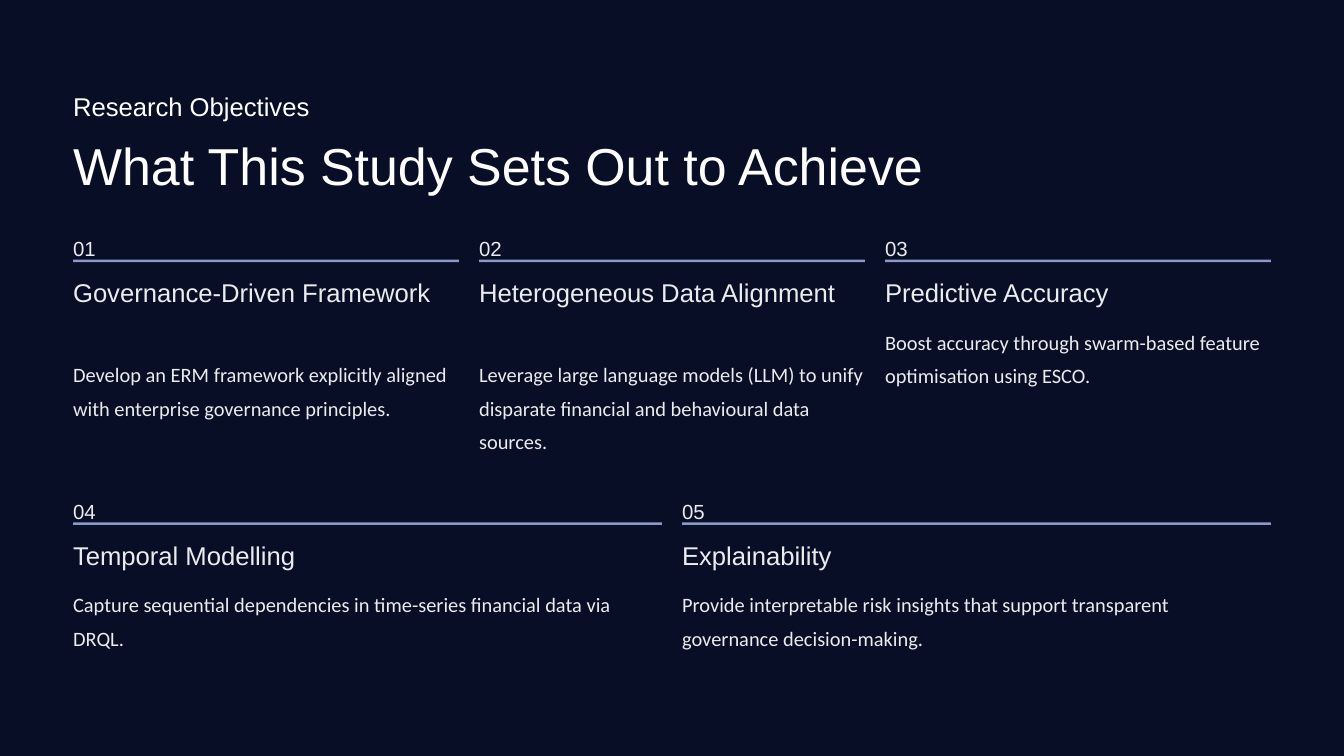
"""Build the research objectives slide: a title above five numbered objectives in two rows."""
from pptx import Presentation
from pptx.dml.color import RGBColor
from pptx.enum.shapes import MSO_SHAPE
from pptx.enum.text import MSO_ANCHOR, MSO_AUTO_SIZE, PP_ALIGN
from pptx.util import Inches, Pt

RECT = MSO_SHAPE.RECTANGLE
TOP = MSO_ANCHOR.TOP
NO_FIT = MSO_AUTO_SIZE.NONE
LEFT_ALIGN = PP_ALIGN.LEFT

THEME = {
    "background": RGBColor.from_string("080E26"),
    "rule": RGBColor.from_string("8C98CA"),
    "white": RGBColor.from_string("FFFFFF"),
    "text": RGBColor.from_string("EBECEF"),
    "title": {"name": "Arial", "size": Pt(44.5)},
    "heading": {"name": "Arial", "size": Pt(22)},
    "number": {"name": "Arial", "size": Pt(17.5)},
    "body": {"name": "Calibri", "size": Pt(17.5)},
}
SPACING = {"title": Pt(55.5), "heading": Pt(27.5), "number": Pt(28.5), "body": Pt(28.5)}

MARGIN, CONTENT_WIDTH, GAP = 0.87, 14.26, 0.24
HEADING_LINE, HEADING_WIDTH = 0.39, 3.1

ROWS = [
    (3.09, 1.19, [
        ("Governance-Driven Framework", 2,
         "Develop an ERM framework explicitly aligned with enterprise governance principles."),
        ("Heterogeneous Data Alignment", 2,
         "Leverage large language models (LLM) to unify disparate financial and behavioural data sources."),
        ("Predictive Accuracy", 1,
         "Boost accuracy through swarm-based feature optimisation using ESCO."),
    ]),
    (6.22, 0.79, [
        ("Temporal Modelling", 1,
         "Capture sequential dependencies in time-series financial data via DRQL."),
        ("Explainability", 1,
         "Provide interpretable risk insights that support transparent governance decision-making."),
    ]),
]


def write(shape, text, style, color, wrap=False):
    """Fill a text shape in one of the theme styles."""
    tf = shape.text_frame
    frame = {"margin_left": 0, "margin_top": 0, "margin_right": 0, "margin_bottom": 0,
             "word_wrap": wrap, "auto_size": NO_FIT, "vertical_anchor": TOP}
    for key, value in frame.items():
        setattr(tf, key, value)
    p = tf.paragraphs[0]
    p.alignment = LEFT_ALIGN
    p.line_spacing = SPACING[style]
    p.space_before = Pt(0)
    r = p.add_run()
    r.text = text
    for key, value in THEME[style].items():
        setattr(r.font, key, value)
    r.font.color.rgb = THEME[color]


def add_text(s, box, text, style, color="text", wrap=False):
    """Add a text box at left, top, width, height in inches."""
    write(s.shapes.add_textbox(*map(Inches, box)), text, style, color, wrap)


prs = Presentation()
prs.slide_width, prs.slide_height = Inches(16), Inches(9)
s = prs.slides.add_slide(prs.slide_layouts[5])
s.background.fill.solid()
s.background.fill.fore_color.rgb = THEME["background"]

title = s.shapes.title
title.left, title.top, title.width, title.height = map(Inches, (MARGIN, 1.56, 10.73, 0.78))
write(title, "What This Study Sets Out to Achieve", "title", "white")
add_text(s, (MARGIN, 1.07, HEADING_WIDTH, HEADING_LINE), "Research Objectives", "heading", "white")

number = 0
for rule_top, body_height, objectives in ROWS:
    count = len(objectives)
    width = (CONTENT_WIDTH - GAP * (count - 1)) / count
    for column, (heading, lines, body) in enumerate(objectives):
        number += 1
        left = MARGIN + column * (width + GAP)
        heading_top = rule_top + 0.19
        heading_height = lines * HEADING_LINE
        heading_width = width if lines > 1 else HEADING_WIDTH
        body_top = heading_top + heading_height + 0.15

        add_text(s, (left, rule_top - 0.38, 0.25, 0.31), f"{number:02d}", "number")
        rule = s.shapes.add_shape(RECT, *map(Inches, (left, rule_top, width, 0.03)))
        rule.shadow.inherit = False
        rule.fill.solid()
        rule.fill.fore_color.rgb = THEME["rule"]
        rule.line.fill.background()
        add_text(s, (left, heading_top, heading_width, heading_height), heading, "heading", wrap=lines > 1)
        add_text(s, (left, body_top, width, body_height), body, "body", wrap=True)

prs.save("out.pptx")
